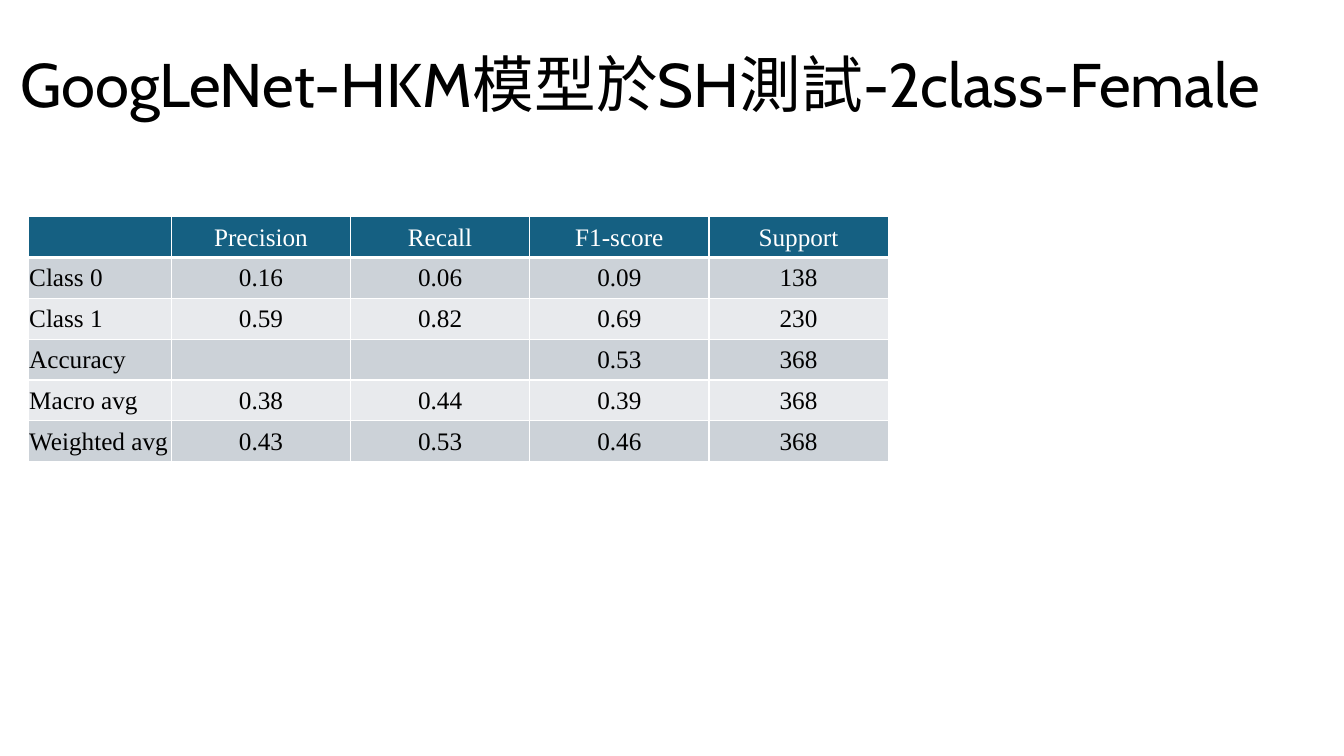
from lxml import etree
from pptx import Presentation
from pptx.dml.color import RGBColor
from pptx.enum.text import MSO_ANCHOR as Anchor, MSO_AUTO_SIZE as AutoSize, PP_ALIGN as Align
from pptx.oxml.ns import qn
from pptx.util import Inches, Pt

COLORS = {
    "text": "000000",
    "header": "156082",
    "odd_row": "CCD2D8",
    "even_row": "E8EAED",
    "white": "FFFFFF",
}
TITLE = "GoogLeNet-HKM模型於SH測試-2class-Female"
SCORES = [
    ["", "Precision", "Recall", "F1-score", "Support"],
    ["Class 0", "0.16", "0.06", "0.09", "138"],
    ["Class 1", "0.59", "0.82", "0.69", "230"],
    ["Accuracy", "", "", "0.53", "368"],
    ["Macro avg", "0.38", "0.44", "0.39", "368"],
    ["Weighted avg", "0.43", "0.53", "0.46", "368"],
]
LABEL_WIDTH = 1.42


def write_text(frame, text, font, size, color="text", align=Align.LEFT, spacing=1.0):
    """Write one formatted paragraph into a text frame."""
    paragraph = frame.paragraphs[0]
    paragraph.alignment = align
    paragraph.line_spacing = spacing
    paragraph.font.size = Pt(size)
    if text:
        run = paragraph.add_run()
        run.text = text
        run.font.name = font
        run.font.size = Pt(size)
        run.font.color.rgb = RGBColor.from_string(COLORS[color])


def set_borders(cell, widths):
    """Give a cell white borders, with widths in points keyed by side."""
    properties = cell._tc.get_or_add_tcPr()
    for position, side in enumerate("LRTB"):
        line = etree.Element(qn(f"a:ln{side}"), w=str(Pt(widths.get(side, 1))))
        fill = etree.SubElement(line, qn("a:solidFill"))
        etree.SubElement(fill, qn("a:srgbClr"), val=COLORS["white"])
        properties.insert(position, line)


def format_cell(cell, text, row, column):
    """Fill one table cell according to its row and column."""
    fill = "header" if row == 0 else "odd_row" if row % 2 else "even_row"
    cell.fill.solid()
    cell.fill.fore_color.rgb = RGBColor.from_string(COLORS[fill])
    cell.margin_left = cell.margin_right = cell.margin_top = Inches(0.01)
    cell.margin_bottom = 0
    cell.vertical_anchor = Anchor.MIDDLE
    write_text(
        cell.text_frame,
        text,
        font="Times New Roman",
        size=18,
        color="text" if row else "white",
        align=Align.CENTER if column else Align.LEFT,
    )
    set_borders(cell, {0: {"B": 3}, 1: {"T": 3}}.get(row, {}))


def place_title(slide, left, top, width, height):
    """Place the slide title in the given box."""
    title = slide.shapes.title
    title.left, title.top = Inches(left), Inches(top)
    title.width, title.height = Inches(width), Inches(height)
    frame = title.text_frame
    frame.auto_size = AutoSize.NONE
    frame.word_wrap = True
    frame.vertical_anchor = Anchor.MIDDLE
    write_text(frame, TITLE, font="Cabin", size=44, spacing=0.9)


def place_scores(slide, left, top, width, height):
    """Place the table of classification scores in the given box."""
    row_count, column_count = len(SCORES), len(SCORES[0])
    table = slide.shapes.add_table(
        row_count, column_count, Inches(left), Inches(top), Inches(width), Inches(height)
    ).table
    score_width = (width - LABEL_WIDTH) / (column_count - 1)
    for index, column in enumerate(table.columns):
        column.width = Inches(score_width if index else LABEL_WIDTH)
    for row, values in enumerate(SCORES):
        table.rows[row].height = Inches(height / row_count)
        for column, text in enumerate(values):
            format_cell(table.cell(row, column), text, row, column)


def main():
    """Build the slide and save it."""
    presentation = Presentation()
    presentation.slide_width = Inches(13.33)
    presentation.slide_height = Inches(7.5)
    slide = presentation.slides.add_slide(presentation.slide_layouts[5])
    place_title(slide, 0.1, 0.14, 13.04, 1.45)
    place_scores(slide, 0.28, 2.15, 8.53, 2.43)
    presentation.save("out.pptx")


if __name__ == "__main__":
    main()
